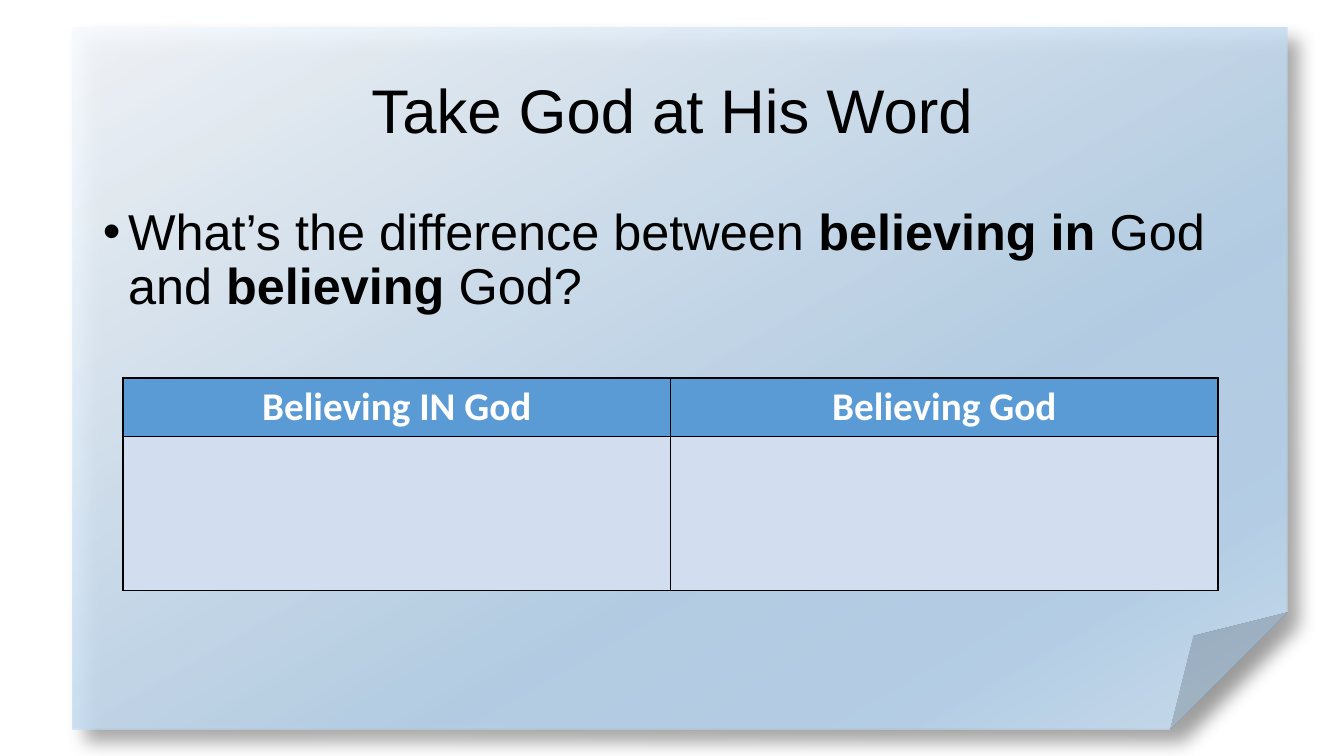
import lxml.etree
import pptx
import pptx.dml.color
import pptx.enum.shapes
import pptx.enum.text
import pptx.oxml
import pptx.oxml.ns
import pptx.util

# Content
TITLE = "Take God at His Word"
QUESTION = [
    ("What’s the difference between ", False),
    ("believing in ", True),
    ("God and ", False),
    ("believing", True),
    (" God?", False),
]
COLUMNS = ["Believing IN God", "Believing God"]

# Layout: left, top, width, height in px, 100 px to the inch
SLIDE_SIZE = (1333, 750)
PAPER_BOX = (72, 27, 1205, 697)
TITLE_BOX = (92, 40, 1150, 145)
BODY_BOX = (92, 200, 1150, 476)
TABLE_BOX = (122, 375, 1086, 211)
HEADER_HEIGHT = 58
INDENT = 25

# Look: gradient stops are position %, colour, opacity %
PAPER_STOPS = [(0, "F7FAFD", 90), (64, "B5D2EC", 84),
               (83, "B5D2EC", 89), (100, "CEE1F2", 90)]
BLACK, WHITE = "000000", "FFFFFF"
HEADER_FILL, CELL_FILL = "5B9BD5", "D2DEEF"
NAMESPACE = 'xmlns:a="http://schemas.openxmlformats.org/drawingml/2006/main"'


def px(value):
    return pptx.util.Emu(value * 9144)


def color(hex_string):
    return pptx.dml.color.RGBColor.from_string(hex_string)


def place(shape, box):
    shape.left, shape.top, shape.width, shape.height = map(px, box)


def format_run(run, font_name, size, hex_string, bold=False):
    run.font.name = font_name
    run.font.size = pptx.util.Pt(size)
    run.font.bold = bold
    run.font.color.rgb = color(hex_string)


def add_paper(slide):
    paper = slide.shapes.add_shape(
        pptx.enum.shapes.MSO_SHAPE.FOLDED_CORNER, *map(px, PAPER_BOX))
    paper.line.fill.background()
    stops = "".join(
        f'<a:gs pos="{position * 1000}"><a:srgbClr val="{hex_string}">'
        f'<a:alpha val="{opacity * 1000}"/></a:srgbClr></a:gs>'
        for position, hex_string, opacity in PAPER_STOPS)
    gradient = pptx.oxml.parse_xml(
        f'<a:gradFill {NAMESPACE} rotWithShape="1"><a:gsLst>{stops}</a:gsLst>'
        '<a:lin ang="3600000" scaled="0"/></a:gradFill>')
    shadow = pptx.oxml.parse_xml(
        f'<a:effectLst {NAMESPACE}><a:outerShdw blurRad="165100" dist="165100" '
        f'dir="2700000" algn="tl" rotWithShape="0"><a:srgbClr val="{BLACK}">'
        '<a:alpha val="40000"/></a:srgbClr></a:outerShdw></a:effectLst>')
    properties = paper._element.spPr
    properties.insert(2, gradient)
    properties.append(shadow)
    # Send the paper behind the placeholders
    paper._element.getparent().insert(2, paper._element)


def add_borders(cell):
    properties = cell._tc.get_or_add_tcPr()
    for index, side in enumerate(("lnL", "lnR", "lnT", "lnB")):
        properties.insert(index, pptx.oxml.parse_xml(
            f'<a:{side} {NAMESPACE} w="12700"><a:solidFill>'
            f'<a:srgbClr val="{BLACK}"/></a:solidFill></a:{side}>'))


def add_comparison_table(slide):
    frame = slide.shapes.add_table(2, len(COLUMNS), *map(px, TABLE_BOX))
    table = frame.table
    for column in table.columns:
        column.width = px(TABLE_BOX[2] // len(COLUMNS))
    table.rows[0].height = px(HEADER_HEIGHT)
    table.rows[1].height = px(TABLE_BOX[3] - HEADER_HEIGHT)
    for index, heading in enumerate(COLUMNS):
        for row, fill in enumerate((HEADER_FILL, CELL_FILL)):
            cell = table.cell(row, index)
            cell.fill.solid()
            cell.fill.fore_color.rgb = color(fill)
            add_borders(cell)
        header = table.cell(0, index).text_frame
        header.text = heading
        paragraph = header.paragraphs[0]
        paragraph.alignment = pptx.enum.text.PP_ALIGN.CENTER
        format_run(paragraph.runs[0], "Calibri", 28, WHITE, True)


def main():
    presentation = pptx.Presentation()
    presentation.slide_width, presentation.slide_height = map(px, SLIDE_SIZE)
    slide = presentation.slides.add_slide(presentation.slide_layouts[1])
    add_paper(slide)

    # Title
    title = slide.shapes.title
    place(title, TITLE_BOX)
    title.text_frame.text = TITLE
    title.text_frame.auto_size = pptx.enum.text.MSO_AUTO_SIZE.NONE
    title.text_frame.vertical_anchor = pptx.enum.text.MSO_ANCHOR.MIDDLE
    paragraph = title.text_frame.paragraphs[0]
    paragraph.alignment = pptx.enum.text.PP_ALIGN.CENTER
    paragraph.line_spacing = 0.9
    format_run(paragraph.runs[0], "Arial", 44, BLACK)

    # Bulleted question
    body = slide.placeholders[1]
    place(body, BODY_BOX)
    body.text_frame.auto_size = pptx.enum.text.MSO_AUTO_SIZE.NONE
    paragraph = body.text_frame.paragraphs[0]
    paragraph.line_spacing = 0.9
    paragraph.space_before = pptx.util.Pt(0)
    properties = paragraph._p.get_or_add_pPr()
    properties.set("marL", str(px(INDENT)))
    properties.set("indent", str(px(-INDENT)))
    bullet = lxml.etree.SubElement(properties, pptx.oxml.ns.qn("a:buChar"))
    bullet.set("char", "•")
    for text, bold in QUESTION:
        run = paragraph.add_run()
        run.text = text
        format_run(run, "Arial", 36, BLACK, bold)

    add_comparison_table(slide)
    presentation.save("out.pptx")


if __name__ == "__main__":
    main()
